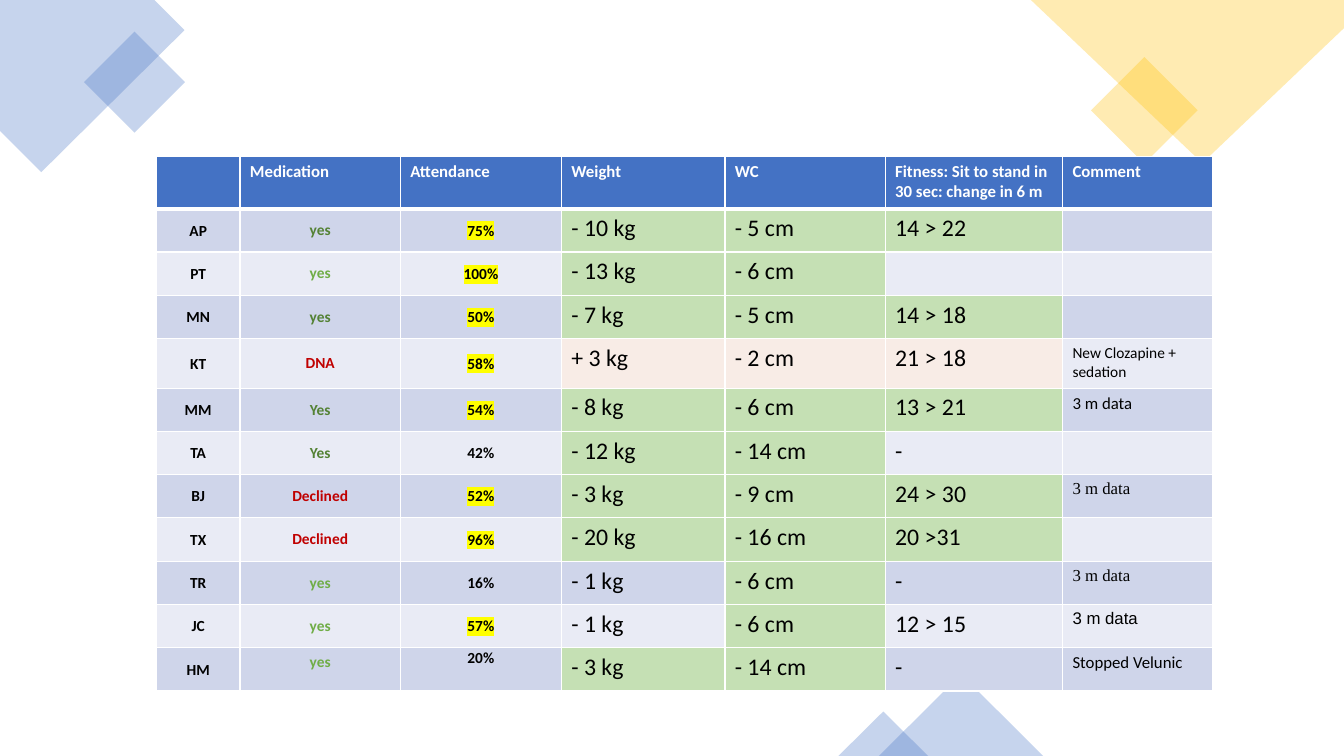
from lxml import etree
from pptx import Presentation, util as u
from pptx.dml.color import RGBColor
from pptx.enum import shapes, text
from pptx.oxml.ns import qn

COLORS = {
    "blue": "4472C4", "gold": "FFC000", "white": "FFFFFF", "black": "000000",
    "odd": "CFD5EA", "even": "E9EBF5", "better": "C5E0B4", "worse": "F8ECE6",
    "green": "548235", "lime": "70AD47", "red": "C00000", "yellow": "FFFF00",
}
HEADERS = ["", "Medication", "Attendance", "Weight", "WC",
           "Fitness: Sit to stand in 30 sec: change in 6 m", "Comment"]
# person, medication, its colour, attendance %, weight, waist, fitness,
# result flags (+ better, - worse, 0 unmarked), comment
PATIENTS = [
    ("AP", "yes", "green", 75, "- 10 kg", "- 5 cm", "14 > 22", "+++", ""),
    ("PT", "yes", "lime", 100, "- 13 kg", "- 6 cm", "", "++0", ""),
    ("MN", "yes", "green", 50, "- 7 kg", "- 5 cm", "14 > 18", "+++", ""),
    ("KT", "DNA", "red", 58, "+ 3 kg", "- 2 cm", "21 > 18", "---", "New Clozapine + sedation"),
    ("MM", "Yes", "green", 54, "- 8 kg", "- 6 cm", "13 > 21", "+++", "3 m data"),
    ("TA", "Yes", "green", 42, "- 12 kg", "- 14 cm", "-", "++0", ""),
    ("BJ", "Declined", "red", 52, "- 3 kg", "- 9 cm", "24 > 30", "+++", "3 m data"),
    ("TX", "Declined", "red", 96, "- 20 kg", "- 16 cm", "20 >31", "+++", ""),
    ("TR", "yes", "lime", 16, "- 1 kg", "- 6 cm", "-", "0+0", "3 m data"),
    ("JC", "yes", "lime", 57, "- 1 kg", "- 6 cm", "12 > 15", "0+0", "3 m data"),
    ("HM", "yes", "lime", 20, "- 3 kg", "- 14 cm", "-", "++0", "Stopped Velunic"),
]
COMMENT_FONTS = {
    "KT": {"size": u.Pt(11)},
    "BJ": {"name": "Times New Roman"},
    "TR": {"name": "Times New Roman"},
    "JC": {"name": "Arial"},
}
TOP_ALIGNED = "HM"
GOOD_ATTENDANCE = 50

COL_WIDTHS = [2.11, 4.04, 4.06, 4.12, 4.04, 4.47, 3.78]
HEADER_H, ROW_H, TALL_ROW_H = 1.32, 1.09, 1.25
TABLE_LEFT, TABLE_TOP = 3.94, 3.94

# kind, colour, left, top, width, height, rotation
DECOR_SHAPES = [
    ("RECTANGLE", "blue", 2.49, 1.17, 1.8, 1.8, 315),
    ("RECTANGLE", "gold", 27.89, 1.83, 1.9, 1.9, 315),
    ("ISOSCELES_TRIANGLE", "blue", 22.15, 16.99, 4.14, 2.06, 0),
    ("ISOSCELES_TRIANGLE", "blue", 21.13, 17.93, 2.26, 1.12, 0),
]
DECOR_OUTLINES = [
    ("blue", [(3.89, 0), (0, 0), (0, 3.3), (1.04, 4.34), (4.65, 0.76)]),
    ("gold", [(33.87, 0), (25.98, 0), (30.3, 4.11), (33.87, 0.71)]),
]

TEXT_INSETS = (0.25, 0.13, 0.25, 0.13)
MEDICATION_INSETS = (0.23, 0.13, 0.23, 0.13)
TIGHT_INSETS = (0.02, 0.02, 0.02, 0)


def rgb(color):
    return RGBColor.from_string(COLORS[color])


def add_color(parent, tag, color):
    el = etree.SubElement(parent, qn(tag))
    etree.SubElement(el, qn("a:srgbClr"), val=COLORS[color])
    return el


def tint(sp, color):
    """Give a decoration a 30 % opaque fill and no outline."""
    sp.shadow.inherit = False
    sp.fill.solid()
    sp.fill.fore_color.rgb = rgb(color)
    sp.line.fill.background()
    clr = sp._element.spPr.find(".//" + qn("a:srgbClr"))
    etree.SubElement(clr, qn("a:alpha"), val="30000")


def add_decor(s):
    for kind, color, left, top, width, height, rotation in DECOR_SHAPES:
        sp = s.shapes.add_shape(getattr(shapes.MSO_SHAPE, kind),
                                u.Cm(left), u.Cm(top), u.Cm(width), u.Cm(height))
        sp.rotation = rotation
        tint(sp, color)
    for color, outline in DECOR_OUTLINES:
        points = [(u.Cm(x), u.Cm(y)) for x, y in outline]
        fb = s.shapes.build_freeform(*points[0])
        fb.add_line_segments(points[1:], close=True)
        tint(fb.convert_to_shape(), color)


def style_cell(cell, fill, insets, bottom=1, middle=False):
    for side, weight in (("L", 1), ("R", 1), ("T", 1), ("B", bottom)):
        ln = etree.SubElement(cell._tc.get_or_add_tcPr(), qn("a:ln" + side),
                              w=str(u.Pt(weight)))
        add_color(ln, "a:solidFill", "white")
    cell.fill.solid()
    cell.fill.fore_color.rgb = rgb(fill)
    for side, inset in zip(("left", "top", "right", "bottom"), insets):
        setattr(cell, "margin_" + side, u.Cm(inset))
    cell.vertical_anchor = text.MSO_ANCHOR.MIDDLE if middle else text.MSO_ANCHOR.TOP


def write(cell, wording, color="black", centred=False, highlight=False, **font):
    if not wording:
        return
    p = cell.text_frame.paragraphs[0]
    p.alignment = text.PP_ALIGN.CENTER if centred else text.PP_ALIGN.LEFT
    r = p.add_run()
    r.text = wording
    for key, value in {"name": "Calibri", "bold": False, **font}.items():
        setattr(r.font, key, value)
    r.font.color.rgb = rgb(color)
    if highlight:
        rPr = r.font._element
        rPr.find(qn("a:solidFill")).addnext(add_color(rPr, "a:highlight", "yellow"))


def fill_patient_row(cells, patient, band):
    person, medication, med_color, attendance, *results, flags, comment = patient
    middle = person != TOP_ALIGNED
    centred_cells = [
        (person, "black", TIGHT_INSETS, True, False),
        (medication, med_color, MEDICATION_INSETS, middle, False),
        (f"{attendance}%", "black", TIGHT_INSETS, middle, attendance >= GOOD_ATTENDANCE),
    ]
    for cell, (wording, color, insets, mid, highlight) in zip(cells, centred_cells):
        style_cell(cell, band, insets, middle=mid)
        write(cell, wording, color, centred=True, highlight=highlight,
              size=u.Pt(11), bold=True)
    for cell, wording, flag in zip(cells[3:6], results, flags):
        style_cell(cell, {"+": "better", "-": "worse", "0": band}[flag], TEXT_INSETS)
        write(cell, wording, size=u.Pt(17))
    style_cell(cells[6], band, TEXT_INSETS)
    write(cells[6], comment, **{"size": u.Pt(12), **COMMENT_FONTS.get(person, {})})


def add_results_table(s):
    heights = [HEADER_H] + [TALL_ROW_H if row[0] == "KT" else ROW_H for row in PATIENTS]
    frame = s.shapes.add_table(len(heights), len(HEADERS), u.Cm(TABLE_LEFT),
                               u.Cm(TABLE_TOP), u.Cm(sum(COL_WIDTHS)), u.Cm(sum(heights)))
    table = frame.table
    for column, width in zip(table.columns, COL_WIDTHS):
        column.width = u.Cm(width)
    for row, height in zip(table.rows, heights):
        row.height = u.Cm(height)
    for cell, header in zip(table.rows[0].cells, HEADERS):
        style_cell(cell, "blue", TEXT_INSETS, bottom=3)
        write(cell, header, "white", size=u.Pt(12), bold=True)
    for i, patient in enumerate(PATIENTS, 1):
        fill_patient_row(list(table.rows[i].cells), patient, "odd" if i % 2 else "even")


def main():
    prs = Presentation()
    prs.slide_width, prs.slide_height = u.Cm(33.87), u.Cm(19.05)
    s = prs.slides.add_slide(prs.slide_layouts[6])
    add_decor(s)
    add_results_table(s)
    prs.save("out.pptx")


if __name__ == "__main__":
    main()
